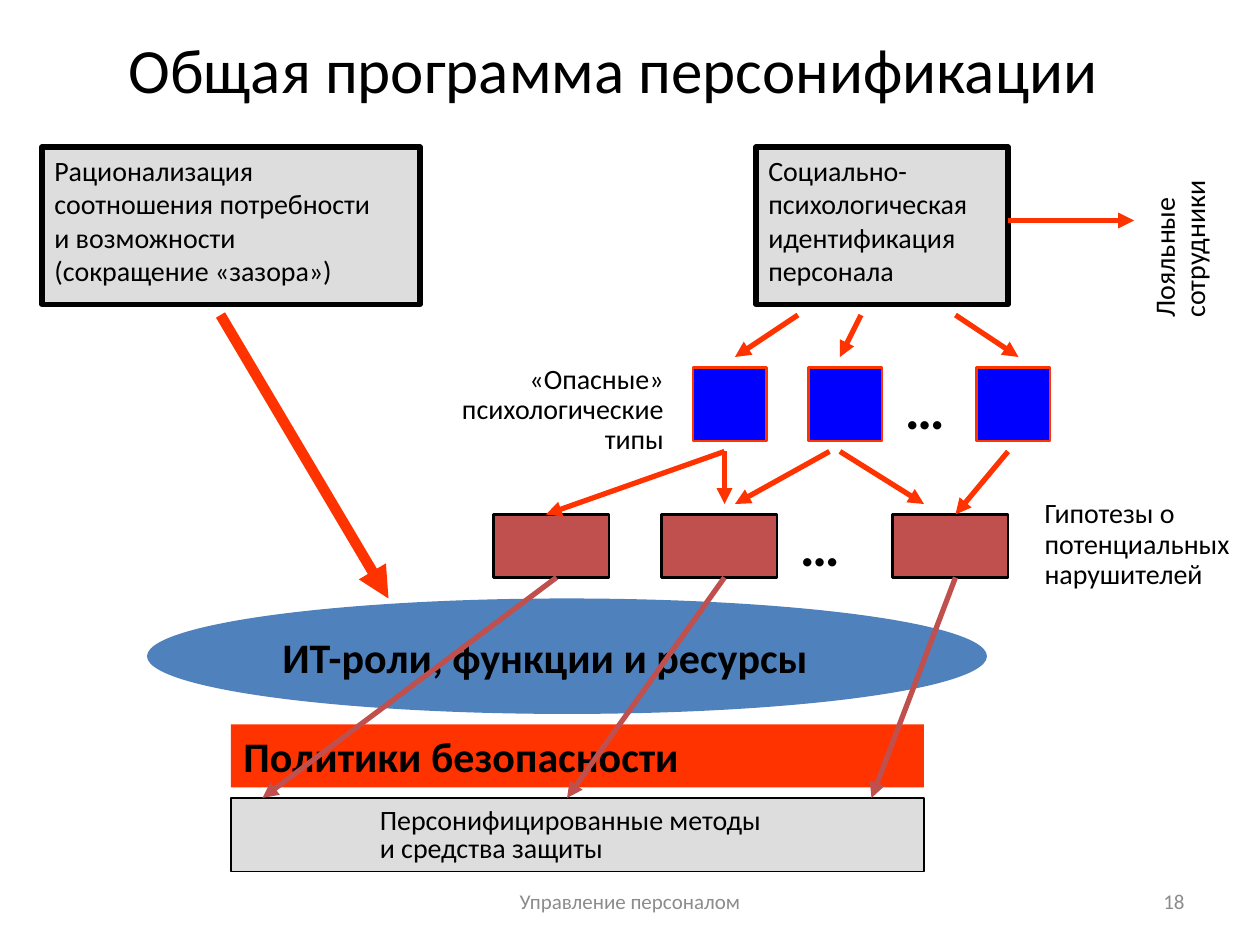
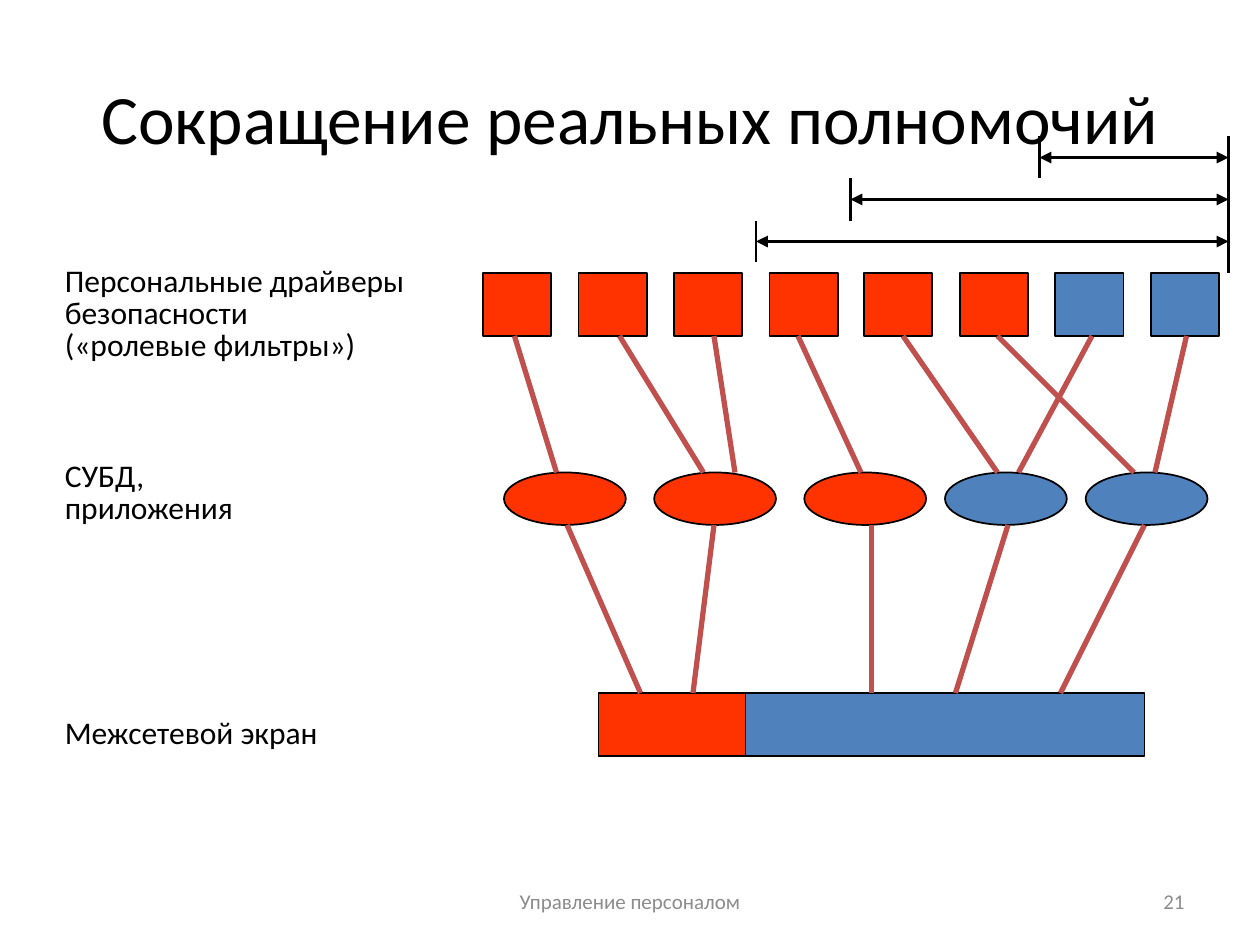
"""Builds two slides on tailoring security to staff and cutting real powers."""
from copy import deepcopy
from pptx import Presentation
from pptx import util as u
from pptx.dml.color import RGBColor
from pptx.enum import shapes, text
from pptx.oxml.ns import qn
from lxml import etree

PX = 7620
BLACK = RGBColor(0x00, 0x00, 0x00)
MUTED = RGBColor(0x8C, 0x8C, 0x8C)
PALE = RGBColor(0xDD, 0xDD, 0xDD)
RED = RGBColor(0xFF, 0x33, 0x00)
BLUE = RGBColor(0x00, 0x00, 0xFF)
STEEL = RGBColor(0x4F, 0x81, 0xBD)
BRICK = RGBColor(0xC0, 0x50, 0x4D)
RECT, OVAL = shapes.MSO_SHAPE.RECTANGLE, shapes.MSO_SHAPE.OVAL
LEFT, MID, RIGHT = text.PP_ALIGN.LEFT, text.PP_ALIGN.CENTER, text.PP_ALIGN.RIGHT


def put(words, *box, kind=None, fill=None, edge=None, size=16, bold=False, color=BLACK,
        align=LEFT, gap=None, wrap=False, mid=False, turn=0):
    place = [n * PX for n in box]
    if kind is None:
        item = slide.shapes.add_textbox(*place)
    else:
        item = slide.shapes.add_shape(kind, *place)
        item.shadow.inherit = False
        item.fill.solid()
        item.fill.fore_color.rgb = fill
        if edge:
            item.line.color.rgb, item.line.width = edge[0], u.Pt(edge[1])
        else:
            item.line.fill.background()
    item.rotation = turn
    if not words:
        return
    frame = item.text_frame
    frame.word_wrap = wrap
    if kind is None and not wrap:
        frame.auto_size = text.MSO_AUTO_SIZE.SHAPE_TO_FIT_TEXT
    frame.vertical_anchor = text.MSO_ANCHOR.MIDDLE if mid else text.MSO_ANCHOR.TOP
    frame.text = words
    for para in frame.paragraphs:
        para.alignment = align
        if gap:
            para.line_spacing = gap
        for run in para.runs:
            font = run.font
            font.name, font.size, font.bold = "Calibri", u.Pt(size), bold
            font.color.rgb = color
        for br in para._p.findall(qn("a:br")):
            br.append(deepcopy(run._r.rPr))


def link(x, y, to_x, to_y, color, width=3, ends=()):
    line = slide.shapes.add_connector(
        shapes.MSO_CONNECTOR.STRAIGHT, x * PX, y * PX, to_x * PX, to_y * PX)
    line.line.color.rgb, line.line.width = color, u.Pt(width)
    pen = line.line._get_or_add_ln()
    for end in ends:
        etree.SubElement(pen, qn(f"a:{end}End"), type="triangle")
    etree.SubElement(line._element.spPr, qn("a:effectLst"))


deck = Presentation()
deck.slide_width, deck.slide_height = 1200 * PX, 900 * PX
pages = []
for title, box, size, number in (
        ("Общая программа персонификации", (28, 36, 1112, 58), 36, "18"),
        ("Сокращение реальных полномочий", (60, 36, 1080, 150), 39.6, "21")):
    slide = deck.slides.add_slide(deck.slide_layouts[6])
    pages.append(slide)
    put(title, *box, size=size, align=MID, wrap=True, mid=True)
    put("Управление персоналом", 410, 834, 380, 48, size=12, color=MUTED,
        align=MID, wrap=True, mid=True)
    put(number, 860, 834, 280, 48, size=12, color=MUTED, align=RIGHT, wrap=True, mid=True)

slide = pages[0]
for x, wide, words in (
        (40, 360, "Рационализация\vсоотношения потребности\nи возможности\v(сокращение «зазора»)"),
        (720, 240, "Социально-\vпсихологическая\vидентификация\vперсонала")):
    put("", x, 140, wide, 150, kind=RECT, fill=PALE, edge=(BLACK, 3))
    put(words, x, 140, wide - 7, 140)
put("Лояльные\vсотрудники", 1043, 197, 164, 70, gap=0.9, turn=270)
put("«Опасные»\vпсихологические\vтипы", 410, 342, 234, 98, align=RIGHT, gap=0.9)
put("Гипотезы о\vпотенциальных\vнарушителей", 983, 470, 217, 98, gap=0.9)
for x in (660, 770, 930):
    put("", x, 350, 70, 70, kind=RECT, fill=BLUE, edge=(RED, 1.5))
for x in (470, 630, 850):
    put("", x, 490, 110, 60, kind=RECT, fill=BRICK, edge=(BLACK, 1.5))
for x, y in ((850, 350), (750, 480)):
    put("…", x, y, 78, 76, size=32, bold=True)

put("ИТ-роли, функции и ресурсы", 140, 570, 800, 110, kind=OVAL, fill=STEEL,
    size=24, bold=True, mid=True)
put("Политики безопасности", 220, 690, 660, 60, kind=RECT, fill=RED,
    size=24, bold=True, mid=True)
put("", 220, 760, 660, 70, kind=RECT, fill=PALE, edge=(BLACK, 0.75))
put("Персонифицированные методы\vи средства защиты", 350, 763, 430, 67, gap=0.85)

link(210, 300, 370, 570, RED, 6, ["tail"])
for ray in ((960, 210, 1080, 210),
            (760, 300, 700, 340), (820, 300, 800, 340), (910, 300, 970, 340),
            (690, 430, 520, 490), (690, 430, 690, 480), (790, 430, 700, 480),
            (800, 430, 880, 480), (960, 430, 910, 490)):
    link(*ray, RED, ends=["tail"])
for x, to_x in ((530, 250), (690, 540), (910, 830)):
    link(x, 550, to_x, 760, BRICK, ends=["tail"])

slide = pages[1]
rim = (BLACK, 1)
for y, words in ((250, "Персональные драйверы\vбезопасности\v(«ролевые фильтры»)"),
                 (420, "СУБД,\vприложения"), (650, "Межсетевой экран")):
    put(words, 50, y, 470, 100, size=18, gap=0.85, wrap=True, mid=True)
for wide, fill in ((520, STEEL), (140, RED)):
    put("", 570, 660, wide, 60, kind=RECT, fill=fill, edge=rim)
for i in range(8):
    put("", 460 + round(i * 636 / 7), 260, 65, 60, kind=RECT,
        fill=RED if i < 6 else STEEL, edge=rim)
for i, x in enumerate((480, 623, 766, 900, 1034)):
    put("", x, 450, 116, 50, kind=OVAL, fill=RED if i < 3 else STEEL, edge=rim)
for x, to_x in ((610, 540), (660, 680), (830, 830), (910, 960), (1010, 1090)):
    link(x, 660, to_x, 500, BRICK)
for x, to_x in ((530, 490), (670, 590), (700, 680), (820, 760),
                (950, 860), (1080, 950), (970, 1040), (1100, 1130)):
    link(x, 450, to_x, 320, BRICK)

link(1170, 130, 1170, 260, BLACK, 1.5)
for i, x in enumerate((990, 810, 720)):
    y = 150 + 40 * i
    link(x, y - 20, x, y + 20, BLACK, 1.5)
    link(x, y, 1170, y, BLACK, 2.25, ["head", "tail"])

deck.save("out.pptx")
